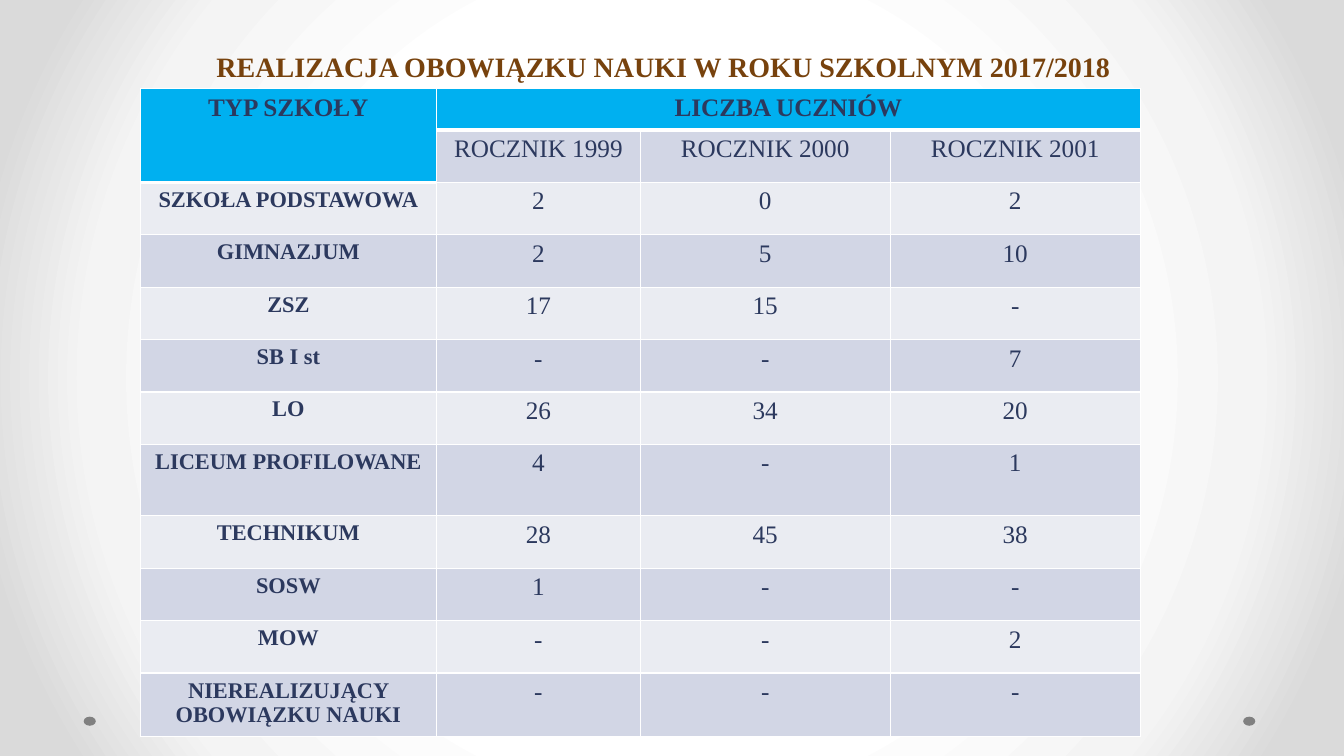
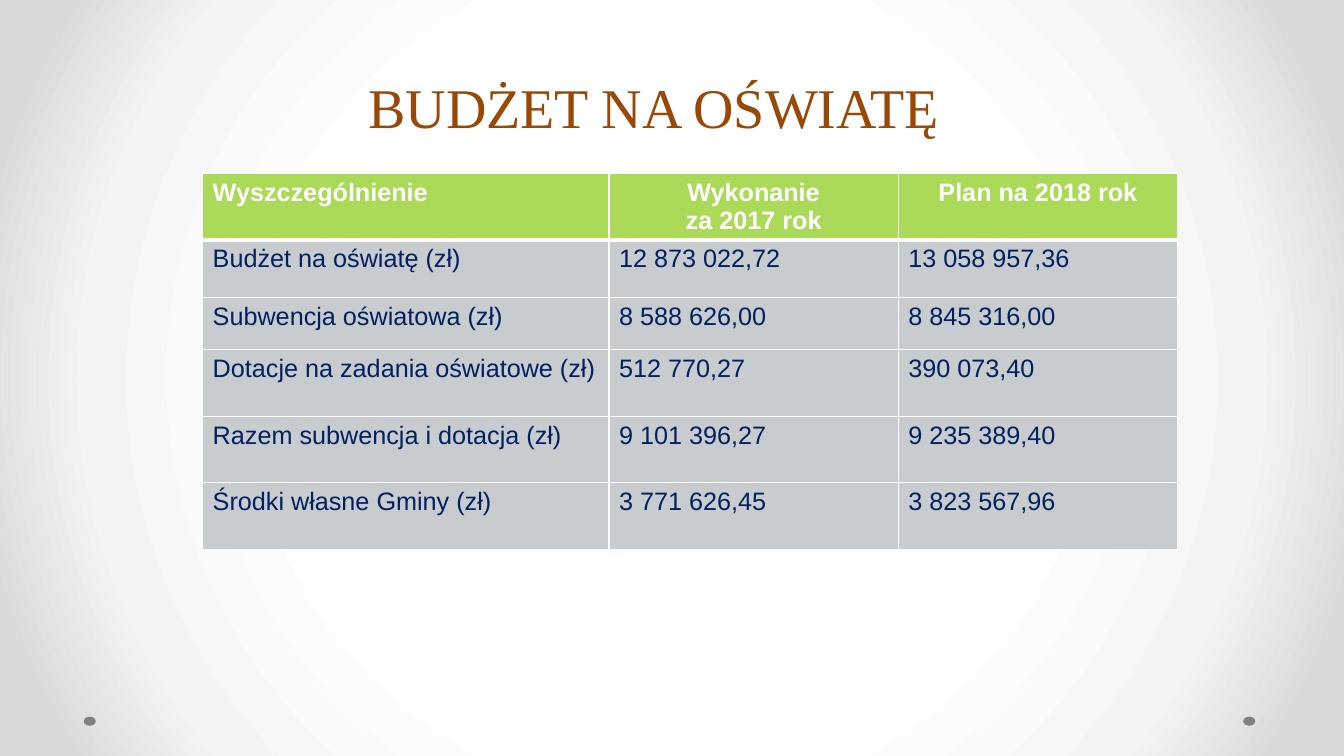
from dataclasses import dataclass

from pptx import Presentation
from pptx.dml.color import RGBColor
from pptx.enum import shapes, text
from pptx.oxml import parse_xml
from pptx.oxml.ns import nsdecls
from pptx.util import Inches, Pt

LEFT, CENTER = text.PP_ALIGN.LEFT, text.PP_ALIGN.CENTER


@dataclass(frozen=True)
class Theme:
    serif: str = "Times New Roman"
    sans: str = "Arial"
    white: str = "FFFFFF"
    dot: str = "808080"
    brown: str = "77420D"
    orange: str = "984807"
    slate: str = "2C395E"
    navy: str = "002060"
    blue: str = "00B0F0"
    green: str = "ABD958"
    grey: str = "C8CCCE"
    bands: tuple = ("EAECF2", "D2D6E5")
    glow: tuple = ((50, "FFFFFF"), (76, "F4F4F4"), (92, "DADADA"))
    title_large: int = 40
    title_small: int = 20
    body: int = 18
    label: int = 16
    thin: int = 1
    thick: int = 3


T = Theme()


# Shared look
def set_background(master):
    stops = "".join(f'<a:gs pos="{pos * 1000}"><a:srgbClr val="{color}"/></a:gs>'
                    for pos, color in T.glow)
    master.background.fill.solid()
    solid = master.element.xpath("p:cSld/p:bg/p:bgPr/a:solidFill")[0]
    solid.getparent().replace(solid, parse_xml(
        f'<a:gradFill {nsdecls("a")} rotWithShape="1"><a:gsLst>{stops}</a:gsLst>'
        '<a:path path="circle"><a:fillToRect l="50000" t="50000" r="50000" b="50000"/>'
        '</a:path></a:gradFill>'))


def add_dots(slide):
    for left in (0.83, 12.33):
        sp = slide.shapes.add_shape(shapes.MSO_SHAPE.OVAL, Inches(left), Inches(7.11),
                                    Inches(0.12), Inches(0.09))
        sp.shadow.inherit = False
        sp.fill.solid()
        sp.fill.fore_color.rgb = RGBColor.from_string(T.dot)
        sp.line.fill.background()


def write(tf, content, *, font, size, color, bold=False, align=LEFT):
    for i, line in enumerate(content.split("\n")):
        p = tf.add_paragraph() if i else tf.paragraphs[0]
        p.alignment = align
        r = p.add_run()
        r.text = line
        r.font.name = font
        r.font.size = Pt(size)
        r.font.bold = bold
        r.font.color.rgb = RGBColor.from_string(color)


def add_slide(prs, title, box, **style):
    slide = prs.slides.add_slide(prs.slide_layouts[5])
    add_dots(slide)
    sp = slide.shapes.title
    sp.left, sp.top, sp.width, sp.height = map(Inches, box)
    tf = sp.text_frame
    tf.auto_size = text.MSO_AUTO_SIZE.NONE
    tf.vertical_anchor = text.MSO_ANCHOR.MIDDLE
    write(tf, title, font=T.serif, align=CENTER, **style)
    return slide


# Tables
def add_table(slide, left, top, widths, heights):
    table = slide.shapes.add_table(
        len(heights), len(widths), Inches(left), Inches(top),
        Inches(sum(widths)), Inches(sum(heights))).table
    table.horz_banding = False
    for column, width in zip(table.columns, widths):
        column.width = Inches(width)
    for row, height in zip(table.rows, heights):
        row.height = Inches(height)
    return table


def style_cell(cell, fill, bottom=T.thin):
    tc_pr = cell._tc.get_or_add_tcPr()
    for side, width in zip("LRTB", (T.thin, T.thin, T.thin, bottom)):
        tc_pr.append(parse_xml(
            f'<a:ln{side} {nsdecls("a")} w="{int(Pt(width))}"><a:solidFill>'
            f'<a:srgbClr val="{T.white}"/></a:solidFill></a:ln{side}>'))
    cell.fill.solid()
    cell.fill.fore_color.rgb = RGBColor.from_string(fill)


# Slides
def build_schools(prs):
    slide = add_slide(prs, "REALIZACJA OBOWIĄZKU NAUKI W ROKU SZKOLNYM 2017/2018",
                      (0.54, 0.44, 12.08, 0.44),
                      size=T.title_small, color=T.brown, bold=True)
    rows = [
        ("TYP SZKOŁY", "LICZBA UCZNIÓW", "", ""),
        ("", "ROCZNIK 1999", "ROCZNIK 2000", "ROCZNIK 2001"),
        ("SZKOŁA PODSTAWOWA", "2", "0", "2"),
        ("GIMNAZJUM", "2", "5", "10"),
        ("ZSZ", "17", "15", "-"),
        ("SB I st", "-", "-", "7"),
        ("LO", "26", "34", "20"),
        ("LICEUM PROFILOWANE", "4", "-", "1"),
        ("TECHNIKUM", "28", "45", "38"),
        ("SOSW", "1", "-", "-"),
        ("MOW", "-", "-", "2"),
        ("NIEREALIZUJĄCY OBOWIĄZKU NAUKI", "-", "-", "-"),
    ]
    heights = [0.41] + [0.52] * 6 + [0.71] + [0.52] * 3 + [0.63]
    table = add_table(slide, 1.39, 0.88, (2.94, 2.02, 2.48, 2.48), heights)
    table.cell(0, 0).merge(table.cell(1, 0))
    table.cell(0, 1).merge(table.cell(0, 3))
    for i, row in enumerate(rows):
        for j, value in enumerate(row):
            cell = table.cell(i, j)
            header = i == 0 or (i, j) == (1, 0)
            style_cell(cell, T.blue if header else T.bands[i % 2],
                       T.thick if header else T.thin)
            if value:
                write(cell.text_frame, value, font=T.serif, color=T.slate,
                      size=T.label if j == 0 and not header else T.body,
                      bold=header or j == 0, align=CENTER)


def build_budget(prs):
    slide = add_slide(prs, "BUDŻET NA OŚWIATĘ", (1.05, 0.67, 10.87, 0.77),
                      size=T.title_large, color=T.orange)
    rows = [
        ("Wyszczególnienie", "Wykonanie\nza 2017 rok", "Plan na 2018 rok"),
        ("Budżet na oświatę (zł)", "12 873 022,72", "13 058 957,36"),
        ("Subwencja oświatowa (zł)", "8 588 626,00", "8 845 316,00"),
        ("Dotacje na zadania oświatowe (zł)", "512 770,27", "390 073,40"),
        ("Razem subwencja i dotacja (zł)", "9 101 396,27", "9 235 389,40"),
        ("Środki własne Gminy (zł)", "3 771 626,45", "3 823 567,96"),
    ]
    heights = [0.66, 0.57, 0.52] + [0.66] * 3
    table = add_table(slide, 2.01, 1.72, (4.03, 2.87, 2.77), heights)
    for i, row in enumerate(rows):
        header = i == 0
        for j, value in enumerate(row):
            cell = table.cell(i, j)
            style_cell(cell, T.green if header else T.grey,
                       T.thick if header else T.thin)
            write(cell.text_frame, value, font=T.sans, size=T.body,
                  color=T.white if header else T.navy, bold=header,
                  align=CENTER if header and j else LEFT)


def main():
    prs = Presentation()
    prs.slide_width, prs.slide_height = Inches(13.33), Inches(7.5)
    set_background(prs.slide_master)
    build_schools(prs)
    build_budget(prs)
    prs.save("out.pptx")


if __name__ == "__main__":
    main()
